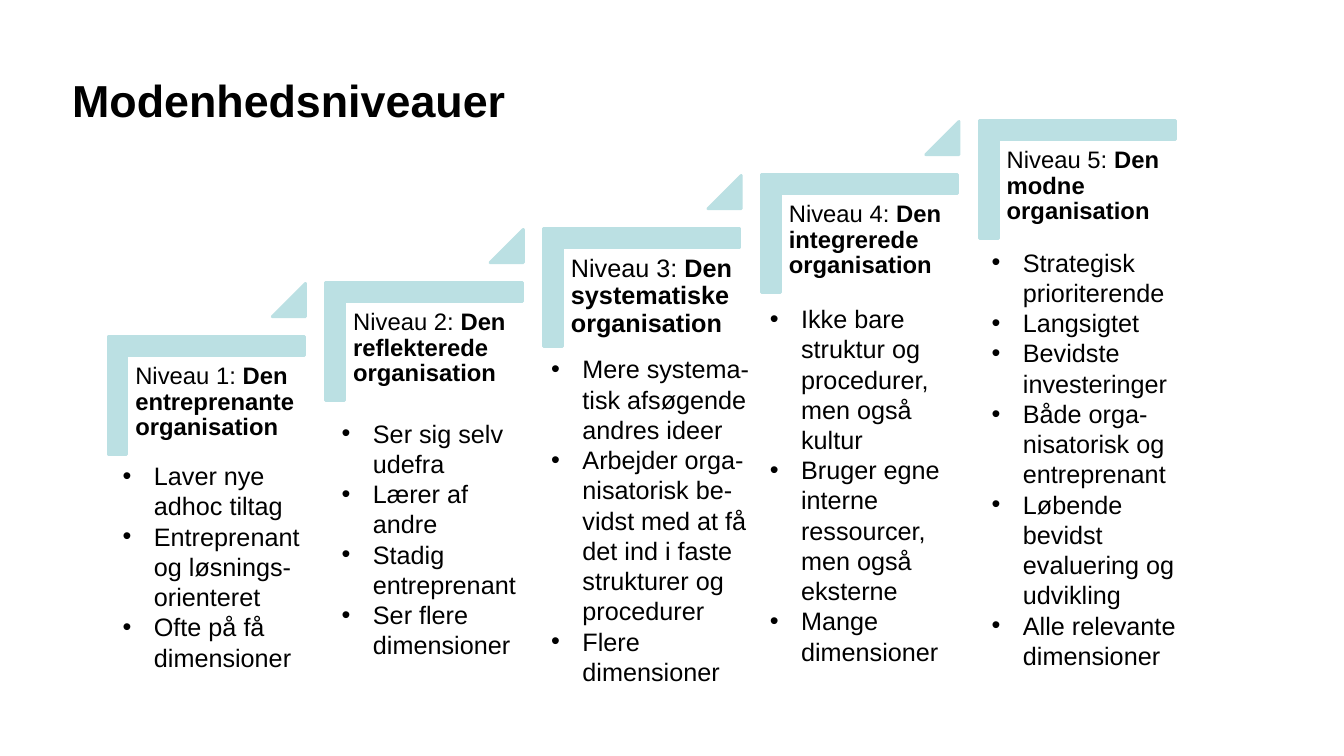
from dataclasses import dataclass

from lxml import etree
from pptx import Presentation
from pptx.dml.color import RGBColor
from pptx.enum import shapes, text
from pptx.oxml import ns
from pptx.util import Cm, Pt


@dataclass(frozen=True)
class Theme:
    font: str = "Arial"
    ink: RGBColor = RGBColor(0, 0, 0)
    teal: RGBColor = RGBColor(0xBB, 0xE0, 0xE3)
    title: int = 32
    body: int = 18
    edge: int = 2


@dataclass(frozen=True)
class Box:
    left: float
    top: float
    width: float
    height: float

    def shift(self, dx: float, dy: float) -> "Box":
        return Box(self.left + dx, self.top + dy, self.width, self.height)

    def cm(self) -> list:
        return [Cm(v) for v in (self.left, self.top, self.width, self.height)]


@dataclass(frozen=True)
class Level:
    name: str
    size: int
    notes: Box
    points: tuple[str, ...]


THEME = Theme()
TITLE = Box(1.57, 1.22, 30.58, 2.57)
CORNER = Box(3.71, 7.49, 2.97, 4.95)
LABEL = Box(3.23, 8.99, 4.47, 3.94)
ARROW = Box(6.86, 7.14, 0.84, 0.84)
STEP, RISE = 5.49, -1.36
INDENT = 0.79

LEVELS = (
    Level("Den entreprenante organisation", 17, Box(2.84, 11.48, 5.08, 5.64), (
        "Laver nye adhoc tiltag",
        "Entreprenant og løsnings-orienteret",
        "Ofte på få dimensioner",
    )),
    Level("Den reflekterede organisation", 17, Box(8.36, 10.41, 5.08, 6.4), (
        "Ser sig selv udefra",
        "Lærer af andre",
        "Stadig entreprenant",
        "Ser flere dimensioner",
    )),
    Level("Den systematiske organisation", 18, Box(13.64, 8.79, 5.51, 8.71), (
        "Mere systema-tisk afsøgende andres ideer",
        "Arbejder orga-nisatorisk be-vidst med at få det ind i faste "
        "strukturer og procedurer",
        "Flere dimensioner",
    )),
    Level("Den integrerede organisation", 17, Box(19.15, 7.52, 5.51, 10.26), (
        "Ikke bare struktur og procedurer, men også kultur",
        "Bruger egne interne ressourcer, men også eksterne",
        "Mange dimensioner",
    )),
    Level("Den modne organisation", 17, Box(24.74, 6.1, 5.51, 11.79), (
        "Strategisk prioriterende",
        "Langsigtet",
        "Bevidste investeringer",
        "Både orga-nisatorisk og entreprenant",
        "Løbende bevidst evaluering og udvikling",
        "Alle relevante dimensioner",
    )),
)


def style(para, size: int) -> None:
    para.font.name = THEME.font
    para.font.size = Pt(size)
    para.font.color.rgb = THEME.ink


def add_text(slide, box: Box):
    frame = slide.shapes.add_textbox(*box.cm()).text_frame
    frame.word_wrap = True
    return frame


def add_title(slide, words: str) -> None:
    frame = add_text(slide, TITLE)
    frame.vertical_anchor = text.MSO_ANCHOR.MIDDLE
    para = frame.paragraphs[0]
    para.text = words
    style(para, THEME.title)
    para.font.bold = True


def add_mark(slide, kind, box: Box, adjust: tuple[float, ...], turn: int = 0) -> None:
    mark = slide.shapes.add_shape(kind, *box.cm())
    mark.rotation = turn
    for i, value in enumerate(adjust):
        mark.adjustments[i] = value
    mark.shadow.inherit = False
    mark.fill.solid()
    mark.fill.fore_color.rgb = THEME.teal
    mark.line.color.rgb = THEME.teal
    mark.line.width = Pt(THEME.edge)


def add_label(slide, box: Box, rank: int, level: Level) -> None:
    frame = add_text(slide, box)
    frame.margin_left = frame.margin_right = Cm(0.18)
    frame.margin_top = frame.margin_bottom = Cm(0.18)
    para = frame.paragraphs[0]
    para.line_spacing = 0.9
    style(para, level.size)
    para.add_run().text = f"Niveau {rank}: "
    name = para.add_run()
    name.text = level.name
    name.font.bold = True


def add_bullet(para) -> None:
    props = para._p.get_or_add_pPr()
    props.set("marL", str(Cm(INDENT)))
    props.set("indent", str(-Cm(INDENT)))
    font = etree.SubElement(props, ns.qn("a:buFont"))
    font.set("typeface", THEME.font)
    sign = etree.SubElement(props, ns.qn("a:buChar"))
    sign.set("char", "•")


def add_notes(slide, level: Level) -> None:
    frame = add_text(slide, level.notes)
    frame.auto_size = text.MSO_AUTO_SIZE.SHAPE_TO_FIT_TEXT
    for i, point in enumerate(level.points):
        para = frame.add_paragraph() if i else frame.paragraphs[0]
        para.text = point
        add_bullet(para)
        style(para, THEME.body)


def main() -> None:
    deck = Presentation()
    deck.slide_width, deck.slide_height = Cm(33.87), Cm(19.05)
    slide = deck.slides.add_slide(deck.slide_layouts[6])
    add_title(slide, "Modenhedsniveauer")
    kinds = shapes.MSO_SHAPE
    for i, level in enumerate(LEVELS):
        dx, dy = i * STEP, i * RISE
        add_mark(slide, kinds.CORNER, CORNER.shift(dx, dy), (0.16, 0.16), 90)
        add_label(slide, LABEL.shift(dx, dy), i + 1, level)
        if level is not LEVELS[-1]:
            add_mark(slide, kinds.ISOSCELES_TRIANGLE, ARROW.shift(dx, dy), (1,))
        add_notes(slide, level)
    deck.save("out.pptx")


if __name__ == "__main__":
    main()
